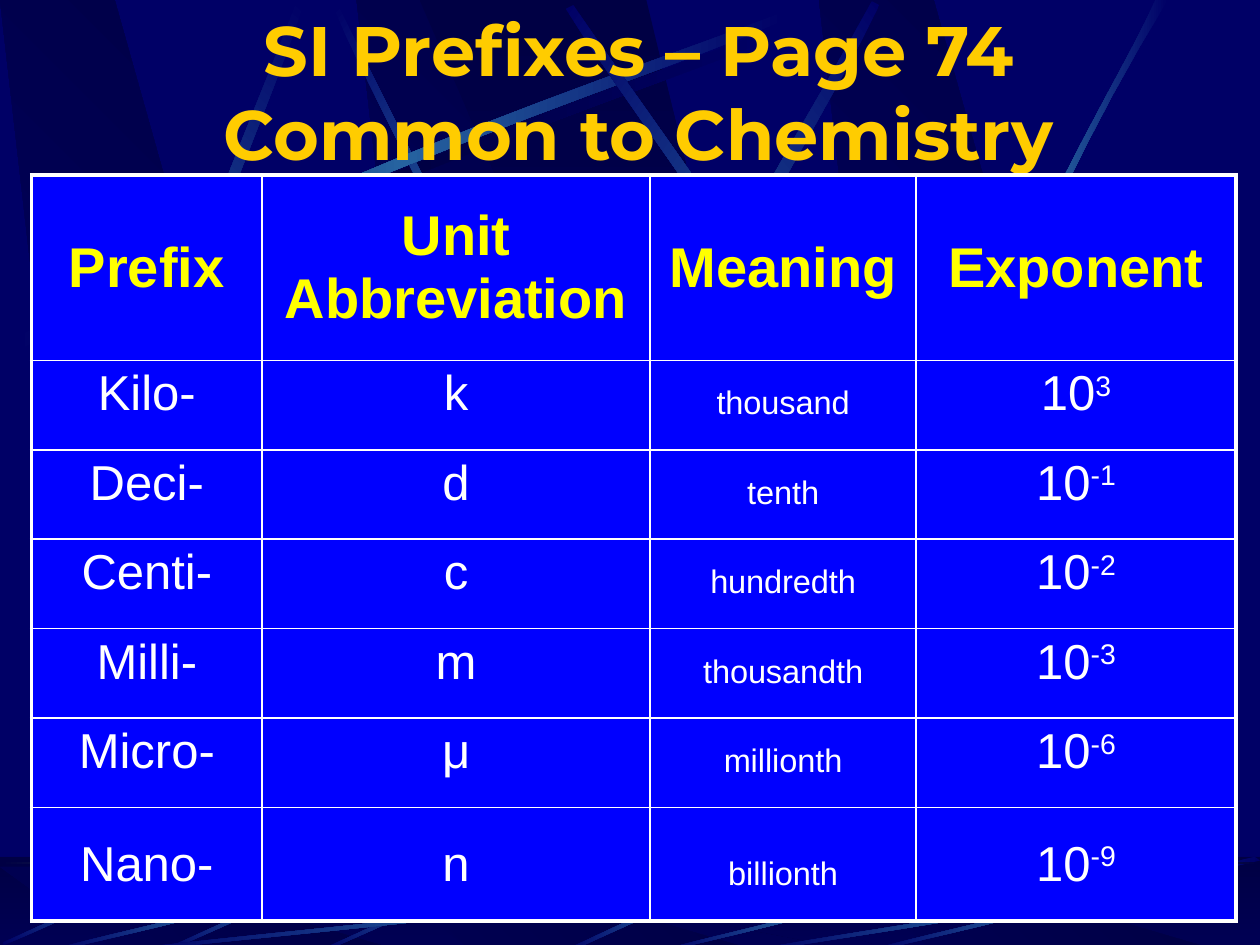
from lxml.etree import SubElement
from pptx import Presentation
from pptx.dml.color import RGBColor
from pptx.enum.shapes import MSO_SHAPE as Shape
from pptx.enum.text import MSO_ANCHOR as Anchor, MSO_AUTO_SIZE as AutoSize, PP_ALIGN as Align
from pptx.oxml.ns import qn
from pptx.util import Inches, Pt

COLORS = {
    "navy": "000066", "dark": "000044", "glow": "2663A0", "horizon": "9CE157",
    "gold": "FFCC00", "yellow": "FFFF00", "white": "FFFFFF", "cell": "0000FF",
}
SHADE = ("navy", "dark")
RISE = ("dark", "navy")
BEAM = ("navy", "glow", "navy")
DIM_BEAM = ("navy", "dark", "navy")

LONG_STREAK = [(0.14, 2.67), (2.78, 1.25), (5.18, 0.51), (6.2, 0.1),
               (6.23, 0.16), (5.22, 0.61), (2.48, 1.43), (0.17, 2.77)]
SKY_STREAKS = [
    (45, [(4.6, 4.36), (3.91, 2.34), (3.02, 0.77), (2.69, 0.05),
          (2.65, 0.07), (2.95, 0.79), (3.98, 2.58), (4.54, 4.39)]),
    (0, LONG_STREAK),
    (311.7, [(0.23, 6.25), (0.93, 3.34), (1.97, 1.05), (2.35, 0.02),
             (2.41, 0.04), (2.07, 1.09), (0.86, 3.68), (0.32, 6.29)]),
    (321.6, [(3.85, 6.14), (4.98, 3.2), (6.38, 1.02), (6.92, 0.01),
             (6.98, 0.04), (6.49, 1.08), (4.86, 3.55), (3.94, 6.21)]),
    (34.7, [(8.06, 5.6), (6.7, 2.93), (5.16, 0.95), (4.55, 0.04),
            (4.49, 0.07), (5.07, 1.01), (6.85, 3.25), (7.99, 5.67)]),
    (0, [(7.38, 3.94), (8.14, 1.73), (8.88, 0.66), (9.17, 0),
         (9.27, 0), (8.36, 1.45), (7.69, 3.22), (7.44, 3.97)]),
]
CENTER_STREAK = [(6.27, 6.82), (5.37, 7.09), (4.77, 7.42), (4.48, 7.54),
                 (4.53, 7.55), (4.9, 7.38), (5.71, 7), (6.28, 6.85)]
SHORT_STREAK = [(4.42, 6.8), (3.55, 7.05), (2.87, 7.4), (2.56, 7.53),
                (2.57, 7.55), (2.88, 7.43), (3.65, 7.03), (4.44, 6.83)]
UNIT_STREAK = [(1, 0.04), (0.57, 0.57), (0.17, 0.85), (0.01, 1),
               (0, 0.98), (0.16, 0.81), (0.62, 0.5), (0.99, 0)]
FLOOR_STREAKS = [(1, 6.8, 6.17, 0.75), (0.42, 6.8, 2.67, 0.75), (5.27, 6.89, 2.31, 0.66),
                 (6.92, 6.8, 2.67, 0.75), (6, 6.8, 4, 0.75)]

HEADINGS = ["Prefix", "Unit Abbreviation", "Meaning", "Exponent"]
PREFIXES = [
    ("Kilo-", "k", "thousand", "3"),
    ("Deci-", "d", "tenth", "-1"),
    ("Centi-", "c", "hundredth", "-2"),
    ("Milli-", "m", "thousandth", "-3"),
    ("Micro-", "μ", "millionth", "-6"),
    ("Nano-", "n", "billionth", "-9"),
]
COLUMN_WIDTHS = [1.83, 3.08, 2.11, 2.54]
ROW_HEIGHTS = [1.47] + [0.71] * 5 + [0.9]


def rgb(name):
    return RGBColor.from_string(COLORS[name])


def paint(shape, names, angle):
    shape.shadow.inherit = False
    shape.line.fill.background()
    shape.fill.gradient()
    shape.fill.gradient_angle = -angle % 360
    stops = shape.element.spPr.find(qn("a:gradFill")).find(qn("a:gsLst"))
    for stop in list(stops):
        stops.remove(stop)
    for index, name in enumerate(names):
        position = 100000 * index // (len(names) - 1)
        stop = SubElement(stops, qn("a:gs"), pos=str(position))
        SubElement(stop, qn("a:srgbClr"), val=COLORS[name])


def add_outline(page, points, names, angle):
    corners = [(Inches(x), Inches(y)) for x, y in points]
    builder = page.shapes.build_freeform(*corners[0], scale=1.0)
    builder.add_line_segments(corners[1:], close=True)
    paint(builder.convert_to_shape(), names, angle)


def curve(controls, steps=12):
    points = []
    for step in range(steps + 1):
        t = step / steps
        weights = ((1 - t) ** 3, 3 * t * (1 - t) ** 2, 3 * t * t * (1 - t), t ** 3)
        points.append(tuple(sum(w * c[axis] for w, c in zip(weights, controls))
                            for axis in (0, 1)))
    return points


def add_streak(page, controls, names=BEAM, angle=0, shift=(0, 0)):
    points = curve(controls[:4]) + curve(controls[4:])
    add_outline(page, [(x + shift[0], y + shift[1]) for x, y in points], names, angle)


def add_band(page, top, height):
    band = page.shapes.add_shape(Shape.RECTANGLE, 0, Inches(top), Inches(10), Inches(height))
    band.shadow.inherit = False
    band.line.fill.background()
    return band


def add_panels(page, top, bottom):
    for left in (2.83, 0, 6.5):
        add_outline(page, [(left + 0.86, bottom), (left + 3.02, bottom),
                           (left + 0.91, top), (left, top)], SHADE, 315)
    add_outline(page, [(3.33, top), (6.58, bottom), (6.94, bottom), (5.13, top)], RISE, 90)


def add_sky(page):
    add_panels(page, 0, 7.5)
    add_streak(page, LONG_STREAK, DIM_BEAM, shift=(0.06, 0.08))
    for angle, controls in SKY_STREAKS:
        add_streak(page, controls, angle=angle)


def add_floor(page):
    paint(add_band(page, 6.8, 0.7), RISE, 90)
    add_panels(page, 6.88, 7.5)
    veil = add_band(page, 6.8, 0.7)
    veil.fill.solid()
    veil.fill.fore_color.rgb = rgb("dark")
    color = veil.element.spPr.find(qn("a:solidFill"))[0]
    SubElement(color, qn("a:alpha"), val="50000")
    add_streak(page, CENTER_STREAK)
    for shift in ((0, 0), (-1.25, 0), (-2.54, -0.05)):
        add_streak(page, SHORT_STREAK, angle=315, shift=shift)
    for left, top, width, height in FLOOR_STREAKS:
        add_streak(page, [(left + x * width, top + y * height) for x, y in UNIT_STREAK])
    paint(add_band(page, 6.84, 0.02), ("dark", "horizon", "dark"), 0)


def style_paragraph(para, font, size, color, bold=False):
    para.alignment = Align.CENTER
    para.font.name = font
    para.font.size = Pt(size)
    para.font.bold = bold
    para.font.color.rgb = rgb(color)


def place_title(page, text):
    title = page.shapes.title
    title.element.getparent().append(title.element)
    title.left, title.top = Inches(0.48), Inches(0)
    title.width, title.height = Inches(9.18), Inches(1.43)
    frame = title.text_frame
    frame.text = text
    frame.word_wrap = True
    frame.auto_size = AutoSize.NONE
    frame.vertical_anchor = Anchor.MIDDLE
    style_paragraph(frame.paragraphs[0], "Montserrat", 40, "gold", True)


def frame_cell(cell, outer_sides):
    properties = cell._tc.get_or_add_tcPr()
    for side, outer in zip("LRTB", outer_sides):
        line = SubElement(properties, qn(f"a:ln{side}"), w=str(Pt(2.25 if outer else 1)))
        fill = SubElement(line, qn("a:solidFill"))
        SubElement(fill, qn("a:srgbClr"), val=COLORS["white"])
    cell.fill.solid()
    cell.fill.fore_color.rgb = rgb("cell")


def add_span(para, text, raised=False):
    span = para.add_run()
    span.text = text
    if raised:
        span._r.get_or_add_rPr().set("baseline", "30000")


def fill_cell(cell, text, row, column):
    para = cell.text_frame.paragraphs[0]
    heading, meaning = row == 0, column == 2
    if heading:
        style_paragraph(para, "Arial", 32, "yellow", True)
    else:
        style_paragraph(para, "Arial", 32 if meaning else 28, "white")
    if column == 3 and not heading:
        add_span(para, "10")
        add_span(para, text, raised=True)
    else:
        add_span(para, text, raised=meaning and not heading)
    if meaning and not heading:
        cell.vertical_anchor = Anchor.BOTTOM
    elif row in (0, len(PREFIXES)):
        cell.vertical_anchor = Anchor.MIDDLE
    else:
        cell.vertical_anchor = Anchor.TOP


def add_prefix_table(page):
    rows = [HEADINGS] + PREFIXES
    last_row, last_column = len(rows) - 1, len(HEADINGS) - 1
    table = page.shapes.add_table(len(rows), len(HEADINGS), Inches(0.25), Inches(1.39),
                                  Inches(sum(COLUMN_WIDTHS)), Inches(sum(ROW_HEIGHTS))).table
    table.first_row = table.horz_banding = False
    for column, width in zip(table.columns, COLUMN_WIDTHS):
        column.width = Inches(width)
    for row, height in zip(table.rows, ROW_HEIGHTS):
        row.height = Inches(height)
    for r, texts in enumerate(rows):
        for c, text in enumerate(texts):
            cell = table.cell(r, c)
            frame_cell(cell, (c == 0, c == last_column, r == 0, r == last_row))
            fill_cell(cell, text, r, c)


def main():
    deck = Presentation()
    deck.slide_width, deck.slide_height = Inches(10), Inches(7.5)
    page = deck.slides.add_slide(deck.slide_layouts[5])
    page.background.fill.solid()
    page.background.fill.fore_color.rgb = rgb("navy")
    add_sky(page)
    add_floor(page)
    place_title(page, "SI Prefixes – Page 74\vCommon to Chemistry")
    add_prefix_table(page)
    deck.save("out.pptx")


if __name__ == "__main__":
    main()
